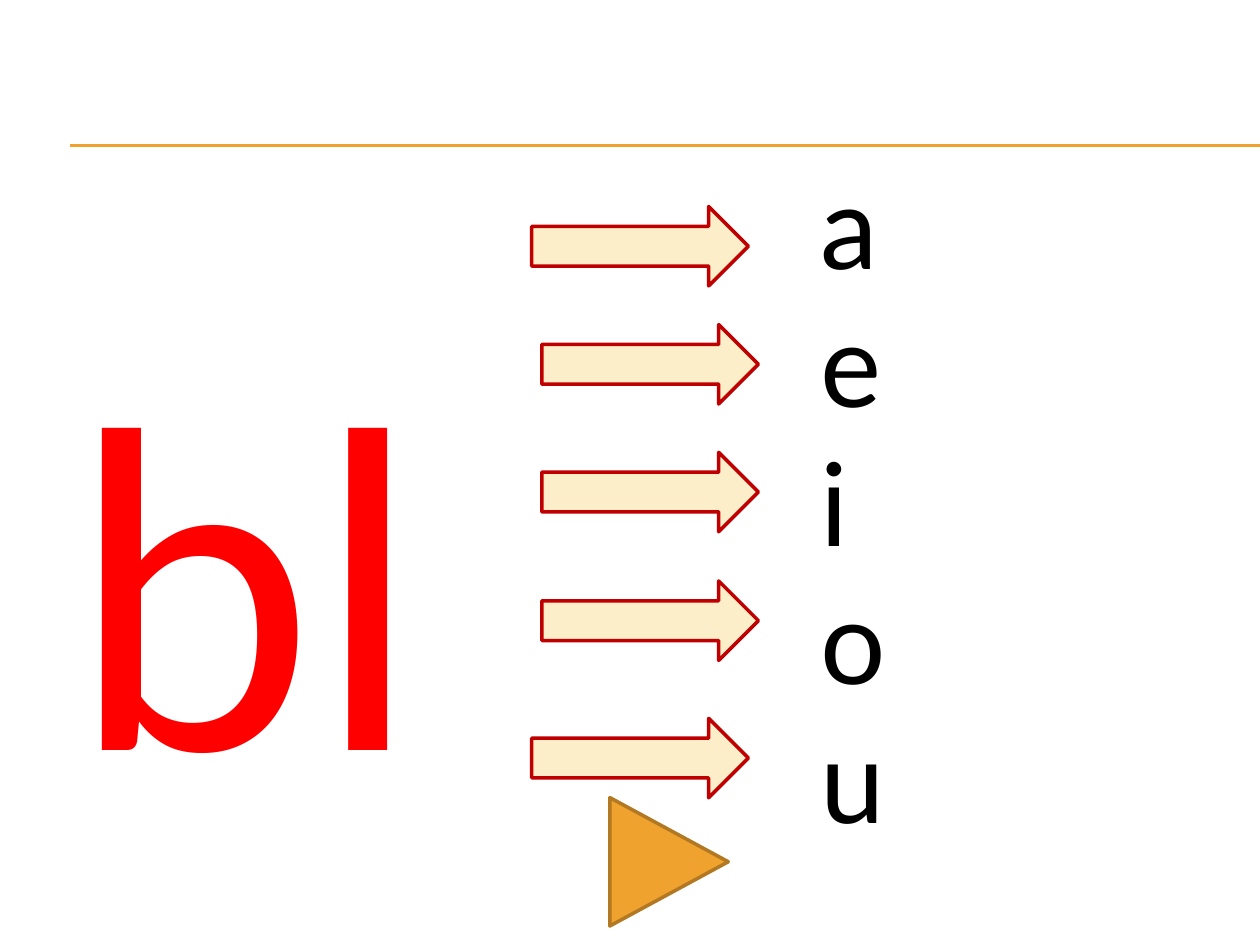
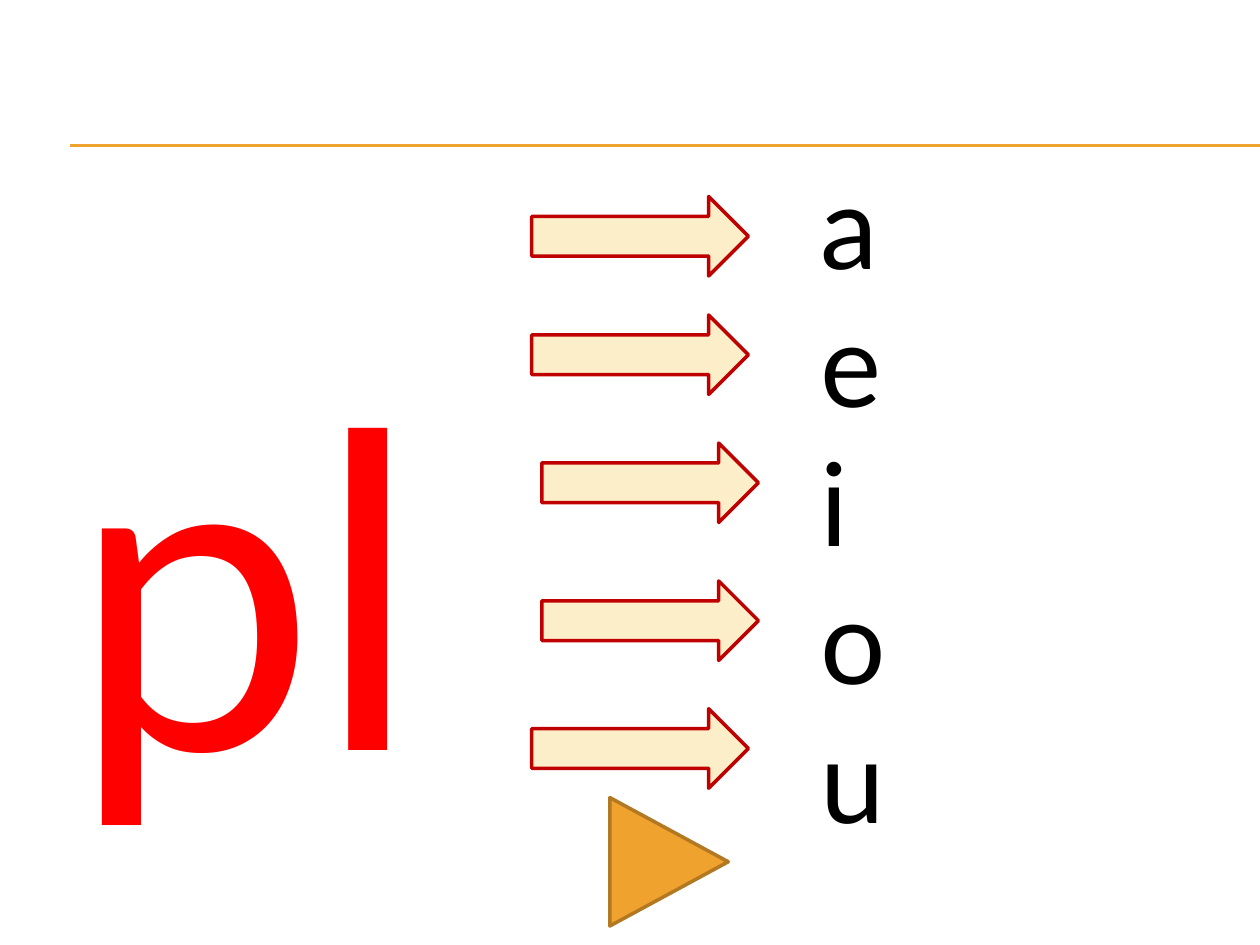
from lxml.etree import SubElement
from pptx import Presentation
from pptx.dml.color import RGBColor
from pptx.enum.shapes import MSO_CONNECTOR, MSO_SHAPE
from pptx.enum.text import MSO_ANCHOR, MSO_AUTO_SIZE
from pptx.oxml.ns import qn
from pptx.util import Pt

ORANGE = RGBColor(0xF0, 0xA2, 0x2E)
BROWN = RGBColor(0xB2, 0x78, 0x22)
CREAM = RGBColor(0xFB, 0xEE, 0xC9)
CRIMSON = RGBColor(0xC0, 0x00, 0x00)
RED = RGBColor(0xFF, 0x00, 0x00)
BLACK = RGBColor(0x00, 0x00, 0x00)

SLIDE_WIDTH, SLIDE_HEIGHT = 720, 540
RULE_LEFT = 40.3
RULE_TOPS = (82.8, 83.5)
TEXT_TOP = 84.24
NEAR, FAR = 303.84, 309.6
VOWELS = "aeiou"
LESSONS = {
    "bl": [(NEAR, 118), (FAR, 185.5), (FAR, 258.5), (FAR, 332), (NEAR, 410.5)],
    "pl": [(NEAR, 112.3), (NEAR, 180), (FAR, 253.2), (FAR, 332), (NEAR, 405)],
}


def write_text(text_frame, text, size, color, font="Lato"):
    text_frame.text = text
    for paragraph in text_frame.paragraphs:
        paragraph.font.name = font
        paragraph.font.size = Pt(size)
        paragraph.font.color.rgb = color


class SyllableDeck:
    """Holds the presentation's style and draws on its current slide."""

    def __init__(self):
        self.presentation = Presentation()
        self.presentation.slide_width = Pt(SLIDE_WIDTH)
        self.presentation.slide_height = Pt(SLIDE_HEIGHT)
        self.slide = None

    def start_slide(self):
        self.slide = self.presentation.slides.add_slide(self.presentation.slide_layouts[6])
        for top in RULE_TOPS:
            self.add_rule(top)

    def add_rule(self, top):
        rule = self.slide.shapes.add_connector(
            MSO_CONNECTOR.STRAIGHT, Pt(RULE_LEFT), Pt(top), Pt(SLIDE_WIDTH), Pt(top))
        rule.line.color.rgb = ORANGE
        rule.line.width = Pt(0.75)
        SubElement(rule._element.spPr, qn("a:effectLst"))

    def add_text(self, text, left, width, height, margin_top=3.6,
                 auto_size=MSO_AUTO_SIZE.NONE, **text_format):
        box = self.slide.shapes.add_textbox(Pt(left), Pt(TEXT_TOP), Pt(width), Pt(height))
        text_frame = box.text_frame
        text_frame.word_wrap = True
        text_frame.auto_size = auto_size
        text_frame.vertical_anchor = MSO_ANCHOR.TOP
        text_frame.margin_top = Pt(margin_top)
        write_text(text_frame, text, **text_format)

    def add_shape(self, kind, left, top, width, height, fill, line, rotation=0):
        shape = self.slide.shapes.add_shape(kind, Pt(left), Pt(top), Pt(width), Pt(height))
        shape.shadow.inherit = False
        shape.rotation = rotation
        shape.fill.solid()
        shape.fill.fore_color.rgb = fill
        shape.line.color.rgb = line
        shape.line.width = Pt(2)

    def add_arrow(self, left, top):
        self.add_shape(MSO_SHAPE.RIGHT_ARROW, left, top, 123.8, 45.4, CREAM, CRIMSON)

    def add_next_marker(self):
        self.add_shape(MSO_SHAPE.ISOSCELES_TRIANGLE, 345.6, 458.6, 73.4, 67.7,
                       ORANGE, BROWN, rotation=90)


def main():
    deck = SyllableDeck()
    for syllable, arrows in LESSONS.items():
        deck.start_slide()
        deck.add_text(syllable, 33.84, 251.3, 371.5, margin_top=94.7, size=250, color=RED)
        for left, top in arrows:
            deck.add_arrow(left, top)
        deck.add_text("\n".join(VOWELS), 461.5, 135.4, 406.8,
                      auto_size=MSO_AUTO_SIZE.SHAPE_TO_FIT_TEXT, size=66, color=BLACK)
        deck.add_next_marker()
    deck.presentation.save("out.pptx")


if __name__ == "__main__":
    main()
